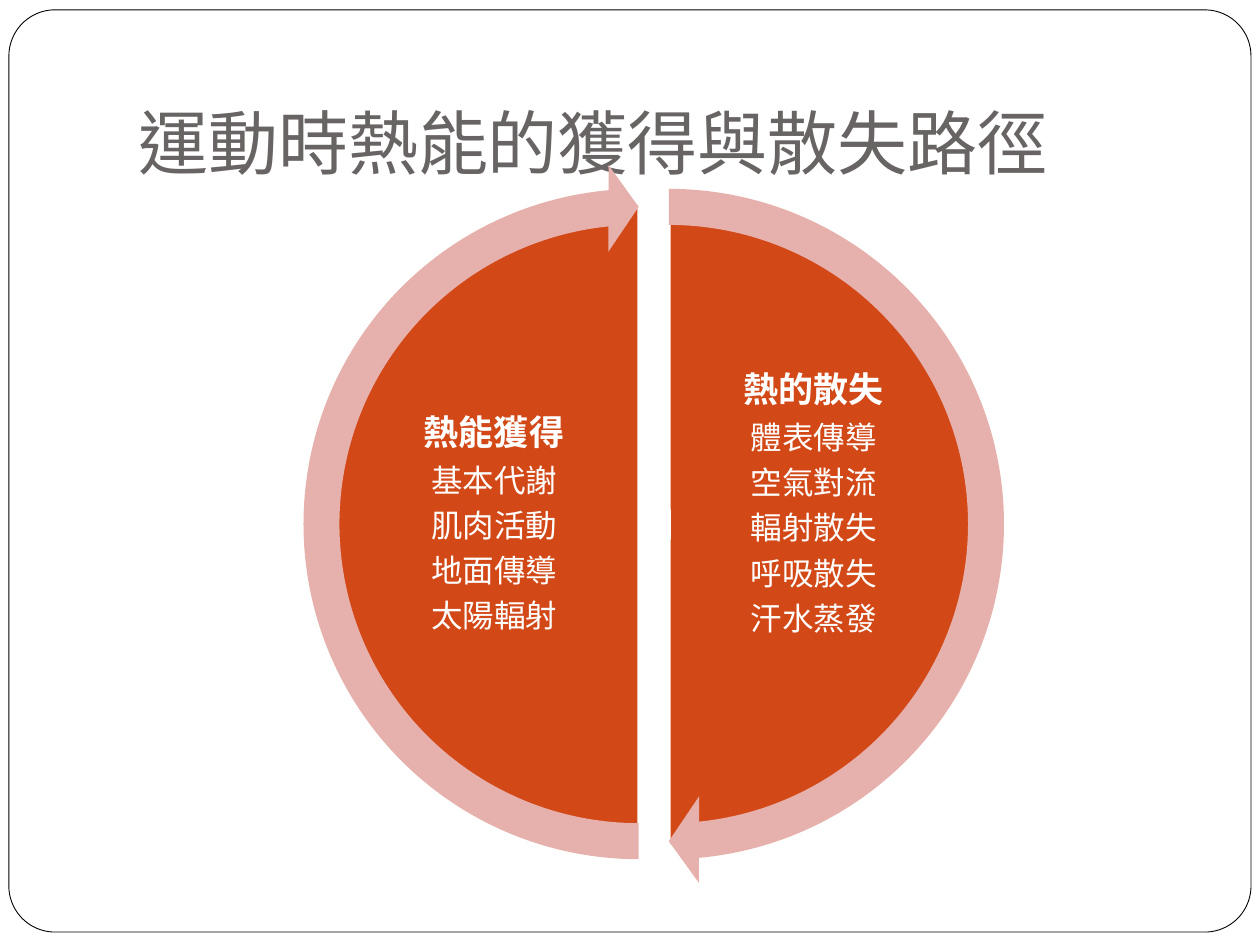
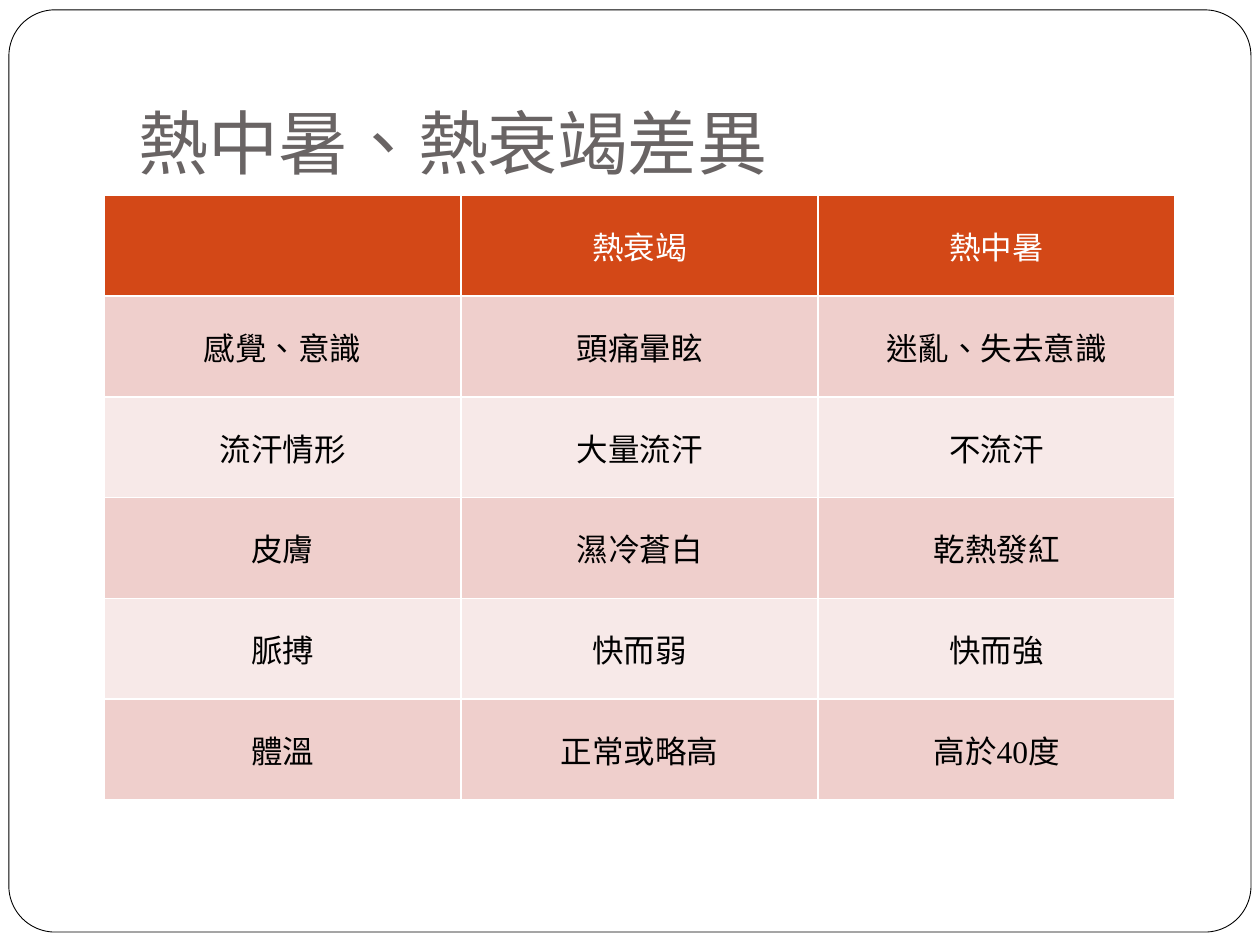
from dataclasses import dataclass

import lxml.etree
import pptx
import pptx.dml.color
import pptx.enum.lang
import pptx.enum.shapes
import pptx.enum.text
import pptx.oxml
import pptx.oxml.ns
import pptx.util

Cm = pptx.util.Cm
Pt = pptx.util.Pt
SHAPE = pptx.enum.shapes.MSO_SHAPE
ALIGN = pptx.enum.text.PP_ALIGN
ANCHOR = pptx.enum.text.MSO_ANCHOR

FONT = "Times New Roman"
WHITE, BLACK, GREY = "FFFFFF", "000000", "696464"
ORANGE, ROSE = "D34817", "E6B1AC"
BANDS = ("EFCFCC", "F7E9E8")
PIE_SIZE, PIE_TOP = 12.93, 4.11
ARROW_SIZE, ARROW_TOP = 14.53, 3.3


@dataclass(frozen=True)
class HalfCircle:
    heading: str
    items: tuple[str, ...]
    pie_left: float
    arrow_left: float
    text_left: float
    pie_angles: tuple[float, float]
    arrow_angles: tuple[float, float]
    bottom_inset: float


HEAT_LOSS = HalfCircle(
    "熱的散失",
    ("體表傳導", "空氣對流", "輻射散失", "呼吸散失", "汗水蒸發"),
    7.04, 6.22, 14.1, (162, 54), (50.73, 162), 0.88,
)
HEAT_GAIN = HalfCircle(
    "熱能獲得",
    ("基本代謝", "肌肉活動", "地面傳導", "太陽輻射"),
    6.4, 5.61, 7.65, (54, 162), (158.73, 54), 0.08,
)

COMPARISON = (
    ("", "熱衰竭", "熱中暑"),
    ("感覺、意識", "頭痛暈眩", "迷亂、失去意識"),
    ("流汗情形", "大量流汗", "不流汗"),
    ("皮膚", "濕冷蒼白", "乾熱發紅"),
    ("脈搏", "快而弱", "快而強"),
    ("體溫", "正常或略高", "高於40度"),
)


def rgb(value: str) -> pptx.dml.color.RGBColor:
    return pptx.dml.color.RGBColor.from_string(value)


def add_run(p, text: str, size: float, color: str, bold: bool = False) -> None:
    r = p.add_run()
    r.text = text
    r.font.name = FONT
    r.font.size = Pt(size)
    r.font.bold = bold
    r.font.color.rgb = rgb(color)
    r.font.language_id = pptx.enum.lang.MSO_LANGUAGE_ID.TRADITIONAL_CHINESE


def add_figure(s, kind, left: float, top: float, width: float, height: float,
               adjustments: tuple[float, ...], fill: str,
               line: str = "", line_width: float = 1) -> None:
    sp = s.shapes.add_shape(kind, Cm(left), Cm(top), Cm(width), Cm(height))
    sp.shadow.inherit = False
    for i, value in enumerate(adjustments):
        sp.adjustments[i] = value
    sp.fill.solid()
    sp.fill.fore_color.rgb = rgb(fill)
    if line:
        sp.line.color.rgb = rgb(line)
        sp.line.width = Pt(line_width)
    else:
        sp.line.fill.background()


def add_text_box(s, left: float, top: float, width: float, height: float, anchor,
                 insets: tuple[float, float, float, float]):
    sp = s.shapes.add_textbox(Cm(left), Cm(top), Cm(width), Cm(height))
    tf = sp.text_frame
    tf.word_wrap = True
    tf.vertical_anchor = anchor
    tf.margin_left, tf.margin_top, tf.margin_right, tf.margin_bottom = map(Cm, insets)
    return tf


def add_title(s, text: str) -> None:
    tf = add_text_box(s, 2.54, 0.76, 21.59, 3.18, ANCHOR.BOTTOM, (0.25, 0.13, 0.25, 0.25))
    add_run(tf.paragraphs[0], text, 40, GREY)


def add_framed_slide(prs):
    s = prs.slides.add_slide(prs.slide_layouts[6])
    add_figure(s, SHAPE.ROUNDED_RECTANGLE, 0.18, 0.2, 25.04, 18.59, (0.05,), WHITE, BLACK, 0.5)
    return s


def set_space_after(p, percent: int) -> None:
    p.space_after = Pt(0)
    spacing = p._p.pPr.find(pptx.oxml.ns.qn("a:spcAft"))
    spacing.clear()
    lxml.etree.SubElement(spacing, pptx.oxml.ns.qn("a:spcPct"), val=str(percent * 1000))


def add_half(s, half: HalfCircle) -> None:
    add_figure(s, SHAPE.PIE, half.pie_left, PIE_TOP, PIE_SIZE, PIE_SIZE,
               half.pie_angles, ORANGE, WHITE)
    tf = add_text_box(s, half.text_left, 7.49, 4.62, 6.17, ANCHOR.MIDDLE,
                      (0.08, 0.08, 0.08, half.bottom_inset))
    for i, text in enumerate((half.heading, *half.items)):
        p = tf.add_paragraph() if i else tf.paragraphs[0]
        p.alignment = ALIGN.CENTER
        p.line_spacing = 0.9
        set_space_after(p, 35)
        add_run(p, text, 18 if i else 20, WHITE, bold=i == 0)


def add_arrow(s, half: HalfCircle) -> None:
    add_figure(s, SHAPE.CIRCULAR_ARROW, half.arrow_left, ARROW_TOP, ARROW_SIZE, ARROW_SIZE,
               (0.05, 3.28, *half.arrow_angles, 0.06), ROSE)


def set_borders(cell, color: str, width: float) -> None:
    tc_pr = cell._tc.get_or_add_tcPr()
    for i, side in enumerate(("lnL", "lnR", "lnT", "lnB")):
        ln = pptx.oxml.parse_xml(
            f'<a:{side} {pptx.oxml.ns.nsdecls("a")} w="{Pt(width)}">'
            f'<a:solidFill><a:srgbClr val="{color}"/></a:solidFill></a:{side}>'
        )
        tc_pr.insert(i, ln)


def add_comparison(s) -> None:
    table = s.shapes.add_table(len(COMPARISON), len(COMPARISON[0]),
                               Cm(2.1), Cm(3.94), Cm(21.59), Cm(12.19)).table
    table.first_row = True
    table.horz_banding = False
    for i, row in enumerate(COMPARISON):
        for j, text in enumerate(row):
            cell = table.cell(i, j)
            cell.vertical_anchor = ANCHOR.MIDDLE
            cell.fill.solid()
            cell.fill.fore_color.rgb = rgb(BANDS[(i - 1) % 2] if i else ORANGE)
            set_borders(cell, WHITE, 1)
            if text:
                p = cell.text_frame.paragraphs[0]
                p.alignment = ALIGN.CENTER
                add_run(p, text, 18, BLACK if i else WHITE)


def main() -> None:
    prs = pptx.Presentation()
    prs.slide_width, prs.slide_height = Cm(25.4), Cm(19.05)

    s = add_framed_slide(prs)
    add_title(s, "運動時熱能的獲得與散失路徑")
    halves = (HEAT_LOSS, HEAT_GAIN)
    for half in halves:
        add_half(s, half)
    for half in halves:
        add_arrow(s, half)

    s = add_framed_slide(prs)
    add_comparison(s)
    add_title(s, "熱中暑、熱衰竭差異")

    prs.save("out.pptx")


if __name__ == "__main__":
    main()
